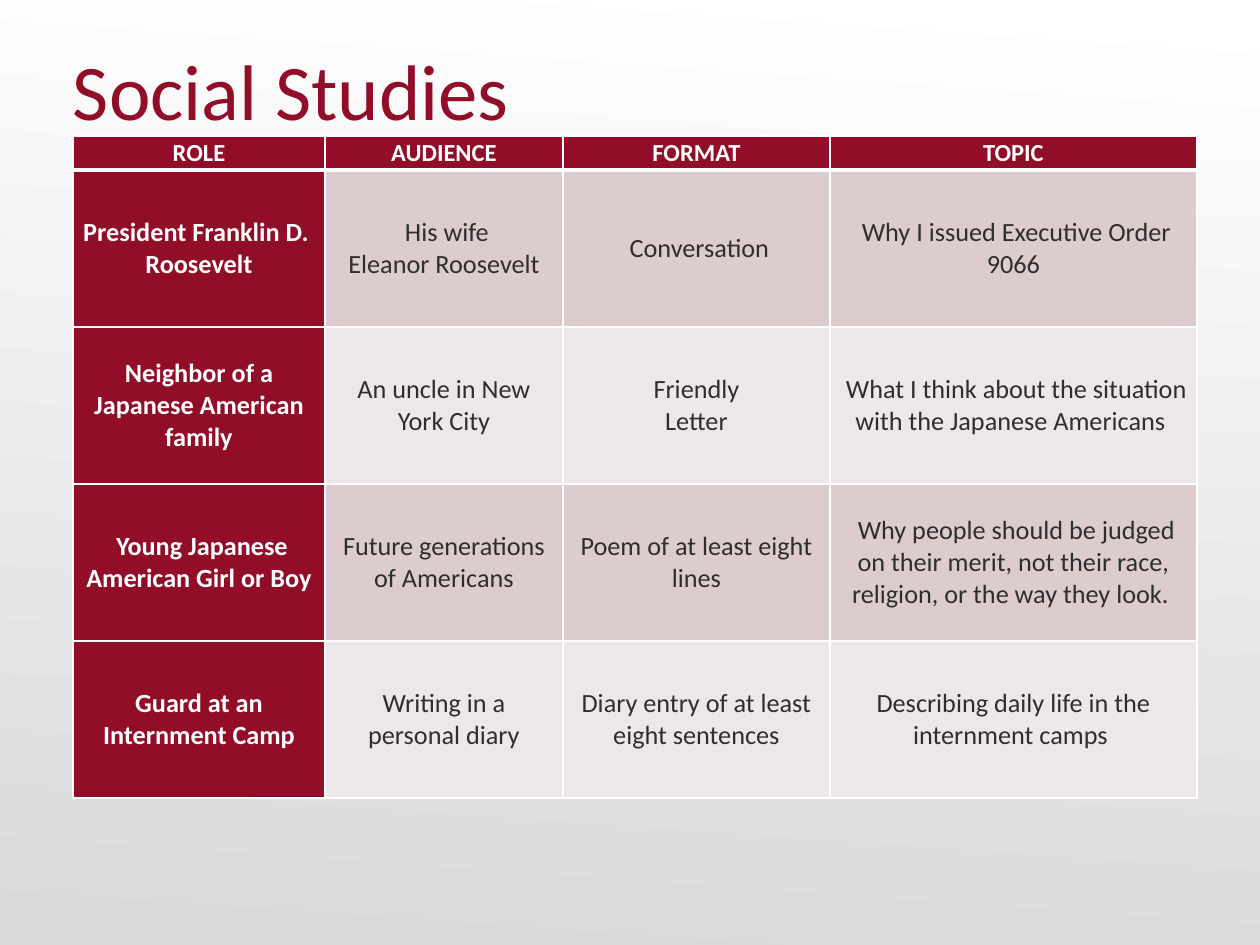
from typing import NamedTuple

from lxml import etree
from pptx import Presentation
from pptx.dml.color import RGBColor
from pptx.enum.text import MSO_ANCHOR, PP_ALIGN
from pptx.oxml.ns import qn
from pptx.util import Emu, Pt

PX = 914400 // 126
MIDDLE, BOTTOM = MSO_ANCHOR.MIDDLE, MSO_ANCHOR.BOTTOM
CENTER = PP_ALIGN.CENTER
FONT = "Calibri"
COLORS = {
    "crimson": "910D28",
    "white": "FFFFFF",
    "gray": "D9D9D9",
    "ink": "2E2E2E",
    "rose": "DCCCCD",
    "pale": "EEE7E8",
}
COLUMN_WIDTHS = (252, 238, 267, 367)
HEADER_HEIGHT, ROW_HEIGHT = 34, 157


class Assignment(NamedTuple):
    role: str
    audience: str
    format: str
    topic: str


ROWS = (
    Assignment("ROLE", "AUDIENCE", "FORMAT", "TOPIC"),
    Assignment("President Franklin D. \nRoosevelt", " His wife\nEleanor Roosevelt",
               " Conversation", " Why I issued Executive Order 9066"),
    Assignment("Neighbor of a Japanese American family", "An uncle in New York City",
               "Friendly\nLetter",
               " What I think about the situation with the Japanese Americans "),
    Assignment(" Young Japanese American Girl or Boy", "Future generations of Americans",
               "Poem of at least eight lines",
               " Why people should be judged on their merit, not their race, "
               "religion, or the way they look. "),
    Assignment("Guard at an Internment Camp", "Writing in a personal diary",
               "Diary entry of at least eight sentences",
               "Describing daily life in the internment camps "),
)


def px(n: int) -> Emu:
    return Emu(n * PX)


def rgb(name: str) -> RGBColor:
    return RGBColor.from_string(COLORS[name])


def style_text(tf, size: int, color: str, bold: bool = False, align=None) -> None:
    for p in tf.paragraphs:
        p.alignment = align
        for r in p.runs:
            r.font.name = FONT
            r.font.size = Pt(size)
            r.font.bold = bold
            r.font.color.rgb = rgb(color)


def add_borders(cell, top: int, bottom: int) -> None:
    """Draw white borders; must run before the cell gets its fill."""
    tc_pr = cell._tc.get_or_add_tcPr()
    for side, width in (("L", 1), ("R", 1), ("T", top), ("B", bottom)):
        ln = etree.SubElement(tc_pr, qn(f"a:ln{side}"), w=str(Pt(width)))
        fill = etree.SubElement(ln, qn("a:solidFill"))
        etree.SubElement(fill, qn("a:srgbClr"), val=COLORS["white"])


def fill_cell(cell, text: str, row: int, col: int) -> None:
    header = row == 0
    strong = header or col == 0
    add_borders(cell, top=3 if row == 1 else 1, bottom=3 if header else 1)
    cell.fill.solid()
    cell.fill.fore_color.rgb = rgb("crimson" if strong else "rose" if row % 2 else "pale")
    cell.margin_left = cell.margin_right = px(9)
    cell.margin_top = cell.margin_bottom = 0
    cell.vertical_anchor = MIDDLE
    cell.text_frame.text = text
    style_text(cell.text_frame, 14 if header else 15,
               "white" if strong else "ink", strong, CENTER)


def add_background(slide) -> None:
    fill = slide.background.fill
    fill.gradient()
    fill.gradient_angle = 266
    for stop, color in zip(fill.gradient_stops, ("white", "gray")):
        stop.color.rgb = rgb(color)


def add_title(slide, text: str) -> None:
    tf = slide.shapes.add_textbox(px(73), px(10), px(630), px(126)).text_frame
    tf.word_wrap = True
    tf.vertical_anchor = BOTTOM
    tf.margin_left = tf.margin_right = tf.margin_bottom = 0
    tf.margin_top = px(9)
    tf.text = text
    style_text(tf, 45, "crimson")


def add_assignments(slide) -> None:
    heights = [HEADER_HEIGHT] + [ROW_HEIGHT] * (len(ROWS) - 1)
    table = slide.shapes.add_table(
        len(ROWS), len(COLUMN_WIDTHS), px(73), px(136),
        px(sum(COLUMN_WIDTHS)), px(sum(heights))).table
    for column, width in zip(table.columns, COLUMN_WIDTHS):
        column.width = px(width)
    for row, height in zip(table.rows, heights):
        row.height = px(height)
    for i, assignment in enumerate(ROWS):
        for j, text in enumerate(assignment):
            fill_cell(table.cell(i, j), text, i, j)


def main() -> None:
    prs = Presentation()
    prs.slide_width, prs.slide_height = px(1260), px(945)
    slide = prs.slides.add_slide(prs.slide_layouts[6])
    add_background(slide)
    add_title(slide, "Social Studies")
    add_assignments(slide)
    prs.save("out.pptx")


if __name__ == "__main__":
    main()
